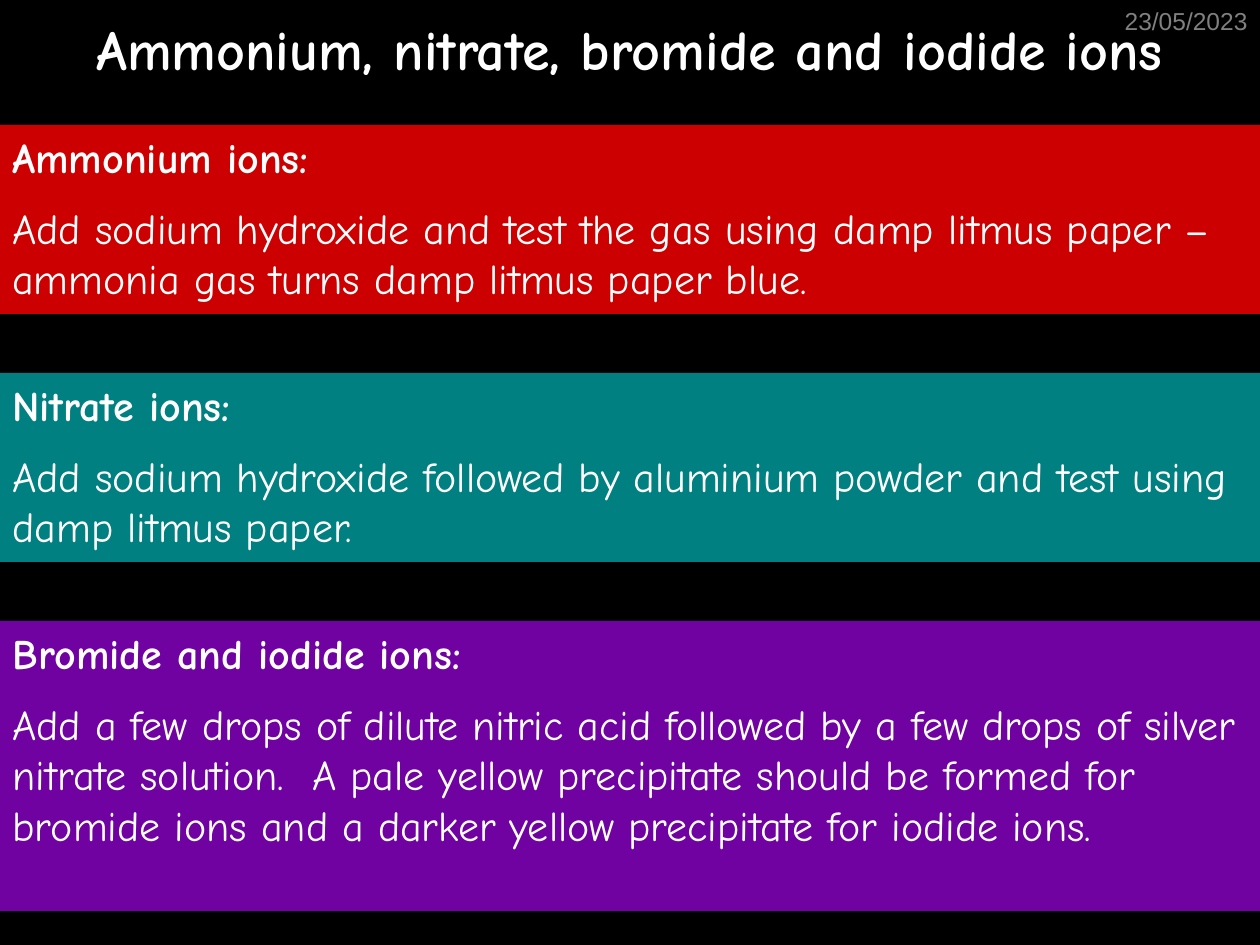
from pptx import Presentation
from pptx.dml.color import RGBColor
from pptx.enum.shapes import MSO_SHAPE
from pptx.enum.text import MSO_ANCHOR as Anchor, PP_ALIGN as Align
from pptx.util import Pt

PX = 914400 / 126
SLIDE_W, SLIDE_H = 1260, 945
BLACK = RGBColor(0x00, 0x00, 0x00)
WHITE = RGBColor(0xFF, 0xFF, 0xFF)
GREY = RGBColor(0x80, 0x80, 0x80)
RED = RGBColor(0xCC, 0x00, 0x00)
TEAL = RGBColor(0x00, 0x80, 0x80)
PURPLE = RGBColor(0x6F, 0x02, 0xA0)


def px(*lengths):
    return [round(length * PX) for length in lengths]


def write(paragraph, text, size=24, font="Comic Neue", color=WHITE,
          bold=False, align=Align.LEFT, before=0):
    paragraph.alignment = align
    paragraph.space_before = Pt(before)
    run = paragraph.add_run()
    run.text = text
    run.font.size = Pt(size)
    run.font.name = font
    run.font.bold = bold
    run.font.color.rgb = color


prs = Presentation()
prs.slide_width, prs.slide_height = px(SLIDE_W, SLIDE_H)
slide = prs.slides.add_slide(prs.slide_layouts[6])
slide.background.fill.solid()
slide.background.fill.fore_color.rgb = BLACK

date = slide.shapes.add_textbox(*px(966, 0, 294, 66)).text_frame
date.word_wrap = True
write(date.paragraphs[0], "23/05/2023", size=14, font="Arial", color=GREY,
      align=Align.RIGHT)

title = slide.shapes.add_textbox(*px(0, 0, SLIDE_W, 96)).text_frame
title.word_wrap = True
title.vertical_anchor = Anchor.MIDDLE
write(title.paragraphs[0], "Ammonium, nitrate, bromide and iodide ions",
      size=32, bold=True, align=Align.CENTER)

FIRST_TOP, PITCH = 125, 248
ion_tests = [
    (RED, 189, "Ammonium ions:",
     "Add sodium hydroxide and test the gas using damp litmus paper – "
     "ammonia gas turns damp litmus paper blue."),
    (TEAL, 189, "Nitrate ions:",
     "Add sodium hydroxide followed by aluminium powder and test using "
     "damp litmus paper."),
    (PURPLE, 290, "Bromide and iodide ions:",
     "Add a few drops of dilute nitric acid followed by a few drops of "
     "silver nitrate solution.  A pale yellow precipitate should be formed "
     "for bromide ions and a darker yellow precipitate for iodide ions."),
]
for row, (color, height, ions, method) in enumerate(ion_tests):
    band = slide.shapes.add_shape(
        MSO_SHAPE.RECTANGLE, *px(0, FIRST_TOP + row * PITCH, SLIDE_W, height))
    band.shadow.inherit = False
    band.fill.solid()
    band.fill.fore_color.rgb = color
    band.line.fill.background()
    frame = band.text_frame
    frame.word_wrap = True
    frame.vertical_anchor = Anchor.TOP
    write(frame.paragraphs[0], ions, bold=True)
    write(frame.add_paragraph(), method, before=12)

prs.save("out.pptx")
